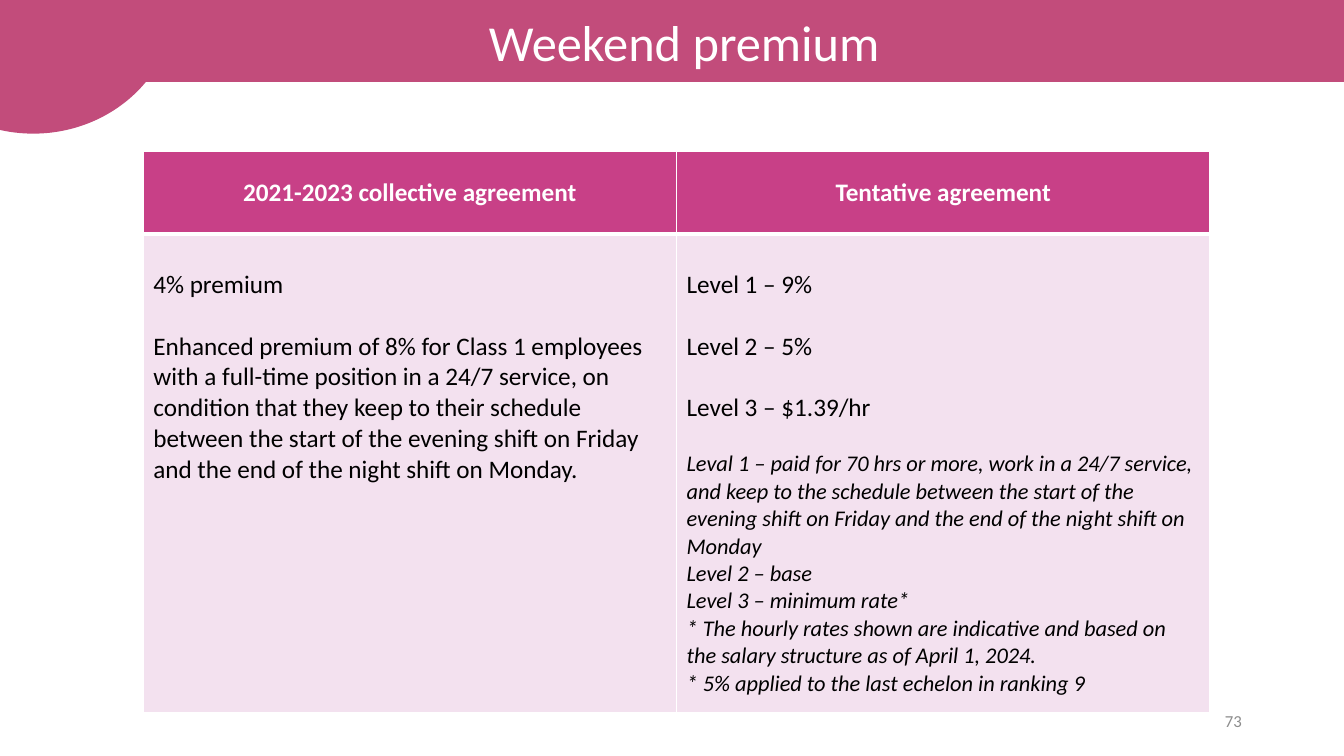
from lxml import etree
from pptx import Presentation
from pptx.dml.color import RGBColor
from pptx.enum.shapes import MSO_SHAPE
from pptx.enum.text import MSO_ANCHOR, PP_ALIGN
from pptx.oxml.ns import qn
from pptx.util import Cm, Pt

CENTER, LEFT, RIGHT = PP_ALIGN.CENTER, PP_ALIGN.LEFT, PP_ALIGN.RIGHT
MIDDLE, TOP = MSO_ANCHOR.MIDDLE, MSO_ANCHOR.TOP
OVAL = MSO_SHAPE.OVAL
TITLE_ONLY = 5

ROSE = RGBColor(0xC2, 0x4C, 0x7B)
MAGENTA = RGBColor(0xC8, 0x40, 0x87)
PALE_PINK = RGBColor(0xF3, 0xE1, 0xEF)
WHITE = RGBColor(0xFF, 0xFF, 0xFF)
BLACK = RGBColor(0, 0, 0)
GREY = RGBColor(0x8C, 0x8C, 0x8C)
FONT = "Calibri"

TITLE = "Weekend premium"
PAGE_NUMBER = "73"
# Each agreement: heading, main terms, explanatory notes
AGREEMENTS = [
    ("2021-2023 collective agreement",
     ["4% premium",
      "Enhanced premium of 8% for Class 1 employees with a full-time position "
      "in a 24/7 service, on condition that they keep to their schedule between "
      "the start of the evening shift on Friday and the end of the night shift "
      "on Monday."],
     []),
    ("Tentative agreement",
     ["Level 1 – 9%", "Level 2 – 5%", "Level 3 – $1.39/hr"],
     ["Leval 1 – paid for 70 hrs or more, work in a 24/7 service, and keep to "
      "the schedule between the start of the evening shift on Friday and the "
      "end of the night shift on Monday",
      "Level 2 – base",
      "Level 3 – minimum rate*",
      "* The hourly rates shown are indicative and based on the salary "
      "structure as of April 1, 2024.",
      "* 5% applied to the last echelon in ranking 9"]),
]

COLUMN_WIDTH = Cm(13.44)
HEADING_HEIGHT, TERMS_HEIGHT = Cm(2.08), Cm(12.07)
TERM_GAP, NOTE_GAP = Pt(22), Pt(19.5)
TERMS_TOP_MARGIN = Cm(0.9)


def write(frame, text, size, color, align=LEFT, bold=False, italic=False, gap=0):
    """Fill the first paragraph if it is free, otherwise add one after a gap."""
    paragraph = frame.paragraphs[0]
    if paragraph.runs:
        paragraph = frame.add_paragraph()
        paragraph.space_before = gap
    paragraph.alignment = align
    run = paragraph.add_run()
    run.text = text
    font = run.font
    font.name, font.size, font.color.rgb = FONT, Pt(size), color
    font.bold, font.italic = bold, italic


def paint(shape, color):
    shape.fill.solid()
    shape.fill.fore_color.rgb = color
    shape.line.color.rgb = color
    shape.line.width = Pt(1)


def style_cell(cell, fill, top, bottom):
    """Set white borders (top and bottom widths in points), then the fill."""
    properties = cell._tc.get_or_add_tcPr()
    for side, width in (("L", 1), ("R", 1), ("T", top), ("B", bottom)):
        border = etree.SubElement(properties, qn(f"a:ln{side}"), w=str(Pt(width)))
        solid = etree.SubElement(border, qn("a:solidFill"))
        etree.SubElement(solid, qn("a:srgbClr"), val=str(WHITE))
    cell.fill.solid()
    cell.fill.fore_color.rgb = fill


def add_banner(slide):
    banner = slide.shapes.title
    banner.left, banner.top, banner.width, banner.height = 0, 0, Cm(34.49), Cm(2.06)
    paint(banner, ROSE)
    banner.text_frame.vertical_anchor = MIDDLE
    write(banner.text_frame, TITLE, 36, WHITE, CENTER)

    corner = slide.shapes.add_shape(OVAL, Cm(-2.74), Cm(-3.38), Cm(7.16), Cm(6.73))
    corner.shadow.inherit = False
    paint(corner, ROSE)


def add_page_number(slide):
    box = slide.shapes.add_textbox(Cm(23.93), Cm(17.65), Cm(7.62), Cm(1.02))
    box.text_frame.word_wrap = True
    box.text_frame.vertical_anchor = MIDDLE
    write(box.text_frame, PAGE_NUMBER, 12, GREY, RIGHT)


def add_comparison(slide):
    count = len(AGREEMENTS)
    table = slide.shapes.add_table(
        2, count, Cm(3.61), Cm(3.81),
        COLUMN_WIDTH * count, HEADING_HEIGHT + TERMS_HEIGHT).table
    table.rows[0].height, table.rows[1].height = HEADING_HEIGHT, TERMS_HEIGHT

    for column, (heading, terms, notes) in enumerate(AGREEMENTS):
        table.columns[column].width = COLUMN_WIDTH
        heading_cell, terms_cell = table.cell(0, column), table.cell(1, column)

        style_cell(heading_cell, MAGENTA, top=1, bottom=3)
        heading_cell.vertical_anchor = MIDDLE
        write(heading_cell.text_frame, heading, 18, WHITE, CENTER, bold=True)

        style_cell(terms_cell, PALE_PINK, top=3, bottom=1)
        terms_cell.vertical_anchor = TOP
        terms_cell.margin_top = TERMS_TOP_MARGIN
        for term in terms:
            write(terms_cell.text_frame, term, 18, BLACK, gap=TERM_GAP)
        for index, note in enumerate(notes):
            write(terms_cell.text_frame, note, 16, BLACK, italic=True,
                  gap=0 if index else NOTE_GAP)


def main():
    presentation = Presentation()
    presentation.slide_width, presentation.slide_height = Cm(33.87), Cm(19.05)
    slide = presentation.slides.add_slide(presentation.slide_layouts[TITLE_ONLY])
    add_banner(slide)
    add_page_number(slide)
    add_comparison(slide)
    presentation.save("out.pptx")


if __name__ == "__main__":
    main()
